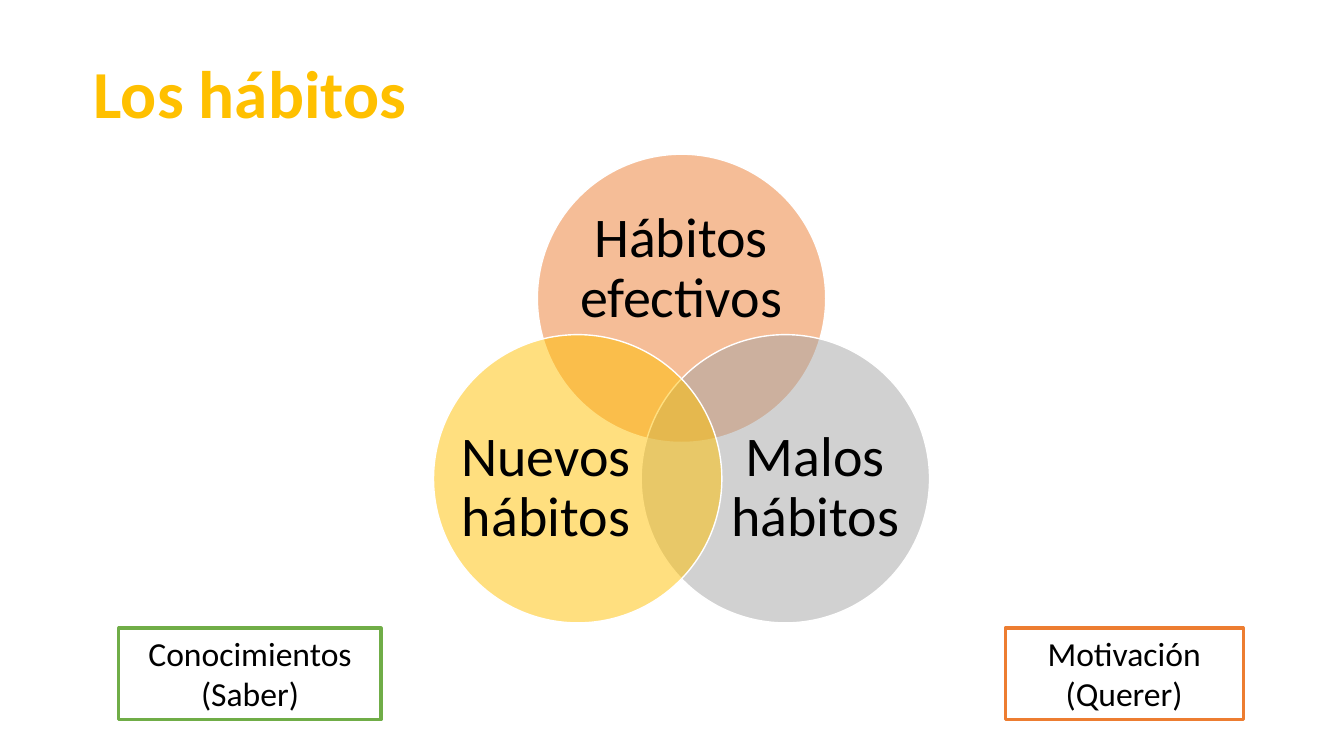
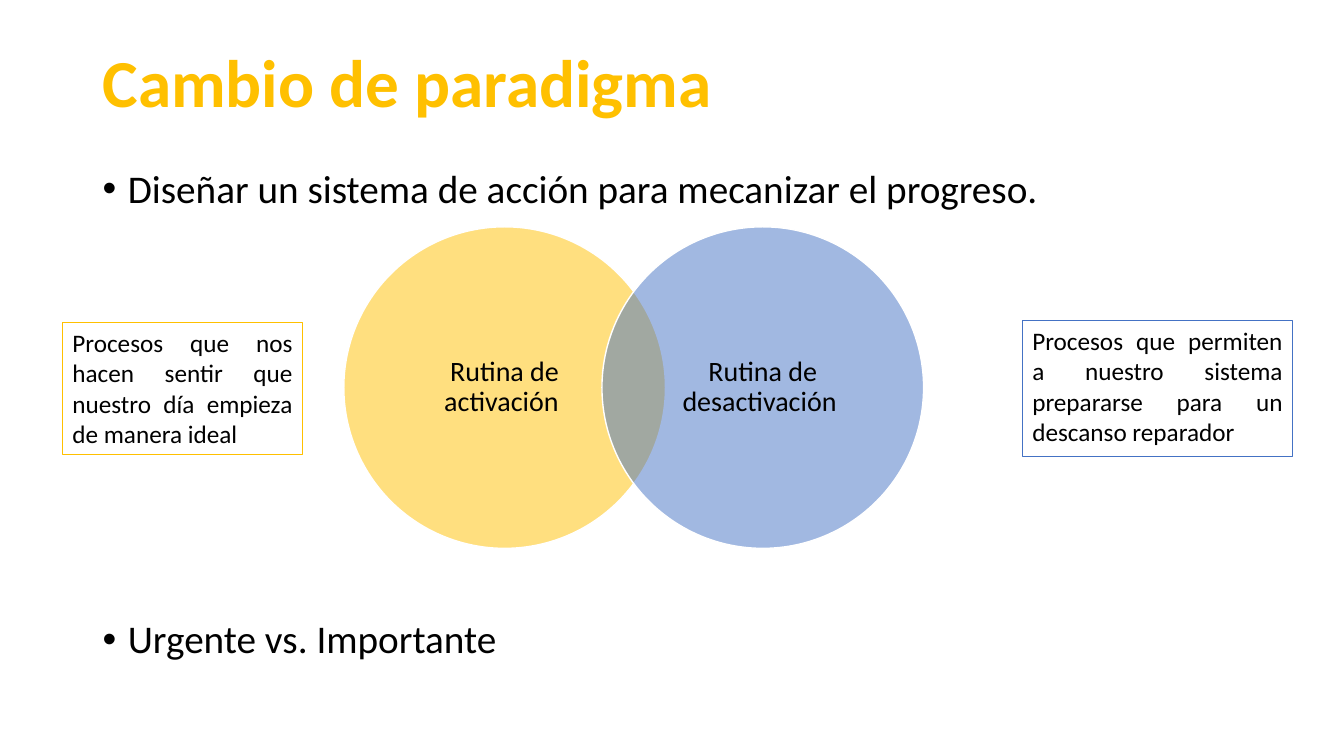
from dataclasses import dataclass

from lxml.etree import SubElement
from pptx import Presentation
from pptx.dml.color import RGBColor
from pptx.enum.shapes import MSO_SHAPE
from pptx.enum.text import MSO_ANCHOR, PP_ALIGN
from pptx.oxml.ns import qn
from pptx.util import Inches, Pt


@dataclass(frozen=True)
class Theme:
    font: str = "Calibri"
    black: str = "000000"
    white: str = "FFFFFF"
    gold: str = "FFC000"
    orange: str = "ED7D31"
    gray: str = "A5A5A5"
    green: str = "70AD47"
    blue: str = "4472C4"
    title: int = 48
    large_label: int = 40
    body: int = 28
    note: int = 24
    label: int = 20
    small_note: int = 18
    tight: float = 0.9


theme = Theme()


def add_text(page, place, *lines, size, color=theme.black, bold=False,
             align=PP_ALIGN.LEFT, anchor=MSO_ANCHOR.TOP, spacing=1.0,
             insets=(0.1, 0.05), bullet=False, gap=0, border=None, border_width=1):
    box = page.shapes.add_textbox(*map(Inches, place))
    if border:
        box.fill.solid()
        box.fill.fore_color.rgb = RGBColor.from_string(theme.white)
        box.line.color.rgb = RGBColor.from_string(border)
        box.line.width = Pt(border_width)
    frame = box.text_frame
    frame.word_wrap = True
    frame.vertical_anchor = anchor
    frame.margin_left = frame.margin_right = Inches(insets[0])
    frame.margin_top = frame.margin_bottom = Inches(insets[1])
    for number, line in enumerate(lines):
        para = frame.add_paragraph() if number else frame.paragraphs[0]
        para.alignment = align
        para.line_spacing = spacing
        if number:
            para.space_before = Pt(gap)
        if bullet:
            properties = para._p.get_or_add_pPr()
            properties.set("marL", str(Inches(0.25)))
            properties.set("indent", str(-Inches(0.25)))
            SubElement(properties, qn("a:buFont")).set("typeface", "Arial")
            SubElement(properties, qn("a:buChar")).set("char", "•")
        span = para.add_run()
        span.text = line
        span.font.name = theme.font
        span.font.size = Pt(size)
        span.font.bold = bold
        span.font.color.rgb = RGBColor.from_string(color)


def add_circle(page, left, top, diameter, color):
    circle = page.shapes.add_shape(
        MSO_SHAPE.OVAL, *map(Inches, (left, top, diameter, diameter)))
    circle.shadow.inherit = False
    circle.fill.solid()
    circle.fill.fore_color.rgb = RGBColor.from_string(color)
    fill_color = circle.element.spPr.find(qn("a:solidFill")).find(qn("a:srgbClr"))
    SubElement(fill_color, qn("a:alpha")).set("val", "50000")
    circle.line.color.rgb = RGBColor.from_string(theme.white)
    circle.line.width = Pt(1)


deck = Presentation()
deck.slide_width = Inches(13.33)
deck.slide_height = Inches(7.5)
blank = deck.slide_layouts[6]

title_style = dict(size=theme.title, color=theme.gold, bold=True,
                   anchor=MSO_ANCHOR.MIDDLE, spacing=theme.tight)
label_style = dict(align=PP_ALIGN.CENTER, anchor=MSO_ANCHOR.MIDDLE,
                   spacing=theme.tight)

habits = deck.slides.add_slide(blank)
add_text(habits, (0.83, 0.23, 11.5, 1.45), "Los hábitos", **title_style)

for left, top, color, label_place, label in (
    (5.33, 1.53, theme.orange, (5.71, 2.03, 2.09, 1.28), "Hábitos efectivos"),
    (6.36, 3.32, theme.gray, (7.23, 4.06, 1.71, 1.57), "Malos hábitos "),
    (4.3, 3.32, theme.gold, (4.56, 4.06, 1.71, 1.57), "Nuevos hábitos"),
):
    add_circle(habits, left, top, 2.86, color)
    add_text(habits, label_place, label, size=theme.large_label,
             insets=(0, 0), **label_style)

for left, width, color, note in (
    (1.18, 2.6, theme.green, "Conocimientos (Saber)"),
    (9.97, 2.36, theme.orange, "Motivación (Querer)"),
):
    add_text(habits, (left, 6.23, width, 0.91), note, size=theme.note,
             align=PP_ALIGN.CENTER, border=color, border_width=2.25)

paradigm = deck.slides.add_slide(blank)
add_text(paradigm, (0.92, 0.13, 11.5, 1.45), "Cambio de paradigma", **title_style)
add_text(paradigm, (0.92, 1.63, 11.62, 5.09),
         "Diseñar un sistema de acción para mecanizar el progreso.",
         "Urgente vs. Importante",
         size=theme.body, spacing=theme.tight, bullet=True, gap=291.5)

diameter, label_size = 3.19, 2.25
label_inset = (diameter - label_size) / 2
for left, color, label in (
    (3.41, theme.gold, "Rutina de activación "),
    (5.97, theme.blue, "Rutina de desactivación "),
):
    add_circle(paradigm, left, 2.25, diameter, color)
    add_text(paradigm,
             (left + label_inset, 2.25 + label_inset, label_size, label_size),
             label, size=theme.label, insets=(0.18, 0.03), **label_style)

for place, color, note in (
    ((0.62, 3.2, 2.38, 1.31), theme.gold,
     "Procesos que nos hacen sentir que nuestro día empieza de manera ideal"),
    ((10.14, 3.18, 2.68, 1.35), theme.blue,
     "Procesos que permiten a nuestro sistema prepararse para un descanso reparador"),
):
    add_text(paradigm, place, note, size=theme.small_note,
             align=PP_ALIGN.JUSTIFY, border=color)

deck.save("out.pptx")
